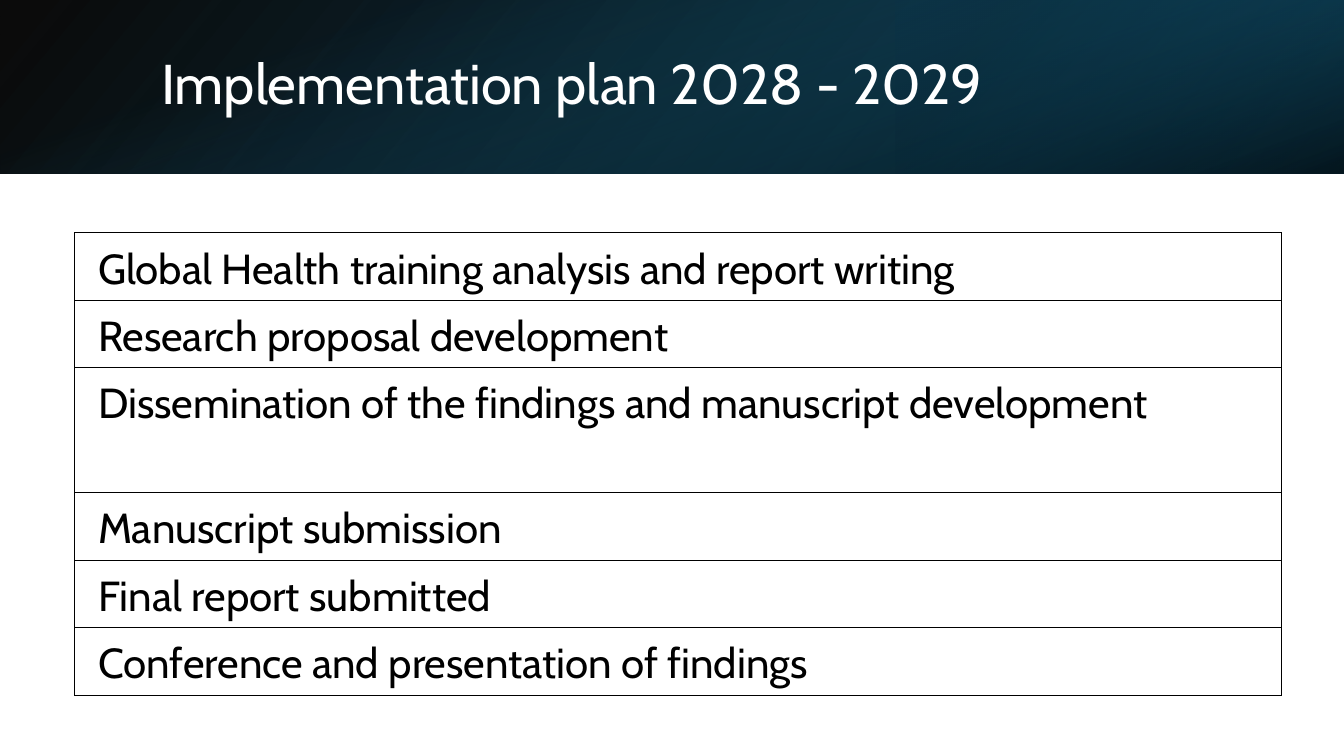
import pptx
import pptx.dml.color
import pptx.enum.shapes
import pptx.enum.text
import pptx.oxml.ns
import pptx.util
from lxml import etree

Pt = pptx.util.Pt
qn = pptx.oxml.ns.qn

SLIDE_W, SLIDE_H = 960, 540
BANNER_H = 124
ROW_H, TALL_ROW_H = 48.2, 89.3
PLAN = [
    ("Global Health training analysis and report writing", ROW_H),
    ("Research proposal development", ROW_H),
    ("Dissemination of the findings and manuscript development", TALL_ROW_H),
    ("Manuscript submission", ROW_H),
    ("Final report submitted", ROW_H),
    ("Conference and presentation of findings", ROW_H),
]


def rgb(value):
    return pptx.dml.color.RGBColor.from_string(value)


def write(tf, text, size=30, color="000000", font="Cabin", spacing=1.0, after=0):
    p = tf.paragraphs[0]
    p.line_spacing = spacing
    p.space_after = Pt(after)
    r = p.add_run()
    r.text = text
    r.font.name = font
    r.font.size = Pt(size)
    r.font.color.rgb = rgb(color)


class Deck:
    def __init__(self, border="000000", border_width=1):
        self.border = border
        self.border_width = border_width
        self.prs = pptx.Presentation()
        self.prs.slide_width, self.prs.slide_height = Pt(SLIDE_W), Pt(SLIDE_H)
        self.slide = self.prs.slides.add_slide(self.prs.slide_layouts[6])

    def gradient(self, x, y, w, h, stops, angle, rotation=0, flip=False):
        """Add a rectangle; stops are (position %, colour, opacity %), angle is clockwise."""
        sp = self.slide.shapes.add_shape(
            pptx.enum.shapes.MSO_SHAPE.RECTANGLE, Pt(x), Pt(y), Pt(w), Pt(h))
        sp.shadow.inherit = False
        sp.line.fill.background()
        sp.rotation = rotation
        if flip:
            sp._element.spPr.find(qn("a:xfrm")).set("flipH", "1")
        sp.fill.gradient()
        sp.fill.gradient_angle = 360 - angle
        for stop, (position, color, _) in zip(sp.fill.gradient_stops, stops):
            stop.position = position / 100
            stop.color.rgb = rgb(color)
        colors = sp._element.spPr.iter(qn("a:srgbClr"))
        for clr, (_, _, opacity) in zip(list(colors), stops):
            etree.SubElement(clr, qn("a:alpha")).set("val", str(opacity * 1000))

    def title(self, text, x, y, w, h):
        tf = self.slide.shapes.add_textbox(Pt(x), Pt(y), Pt(w), Pt(h)).text_frame
        tf.word_wrap = True
        tf.vertical_anchor = pptx.enum.text.MSO_ANCHOR.MIDDLE
        write(tf, text, size=40, color="FFFFFF", spacing=0.9)

    def table(self, rows, x, y, w):
        total = sum(height for _, height in rows)
        table = self.slide.shapes.add_table(
            len(rows), 1, Pt(x), Pt(y), Pt(w), Pt(total)).table
        table.first_row = table.horz_banding = False
        for i, (text, height) in enumerate(rows):
            table.rows[i].height = Pt(height)
            cell = table.cell(i, 0)
            cell.fill.background()
            cell.margin_left = cell.margin_right = Pt(16.6)
            cell.margin_top, cell.margin_bottom = Pt(2.2), 0
            write(cell.text_frame, text, spacing=1.15, after=8)
            self.outline(cell)

    def outline(self, cell):
        tc_pr = cell._tc.get_or_add_tcPr()
        for i, side in enumerate("LRTB"):
            ln = etree.Element(qn(f"a:ln{side}"), w=str(Pt(self.border_width)))
            fill = etree.SubElement(ln, qn("a:solidFill"))
            etree.SubElement(fill, qn("a:srgbClr")).set("val", self.border)
            tc_pr.insert(i, ln)


def main():
    deck = Deck()
    deck.gradient(0, 0, SLIDE_W, BANNER_H,
                  [(0, "000000", 96), (100, "104862", 100)], 140, flip=True)
    deck.gradient(SLIDE_W * 2 / 3, 0, SLIDE_W / 3, BANNER_H,
                  [(19, "0B3041", 68), (100, "156082", 79)], 320, rotation=180, flip=True)
    offset = (SLIDE_W - BANNER_H) / 2
    deck.gradient(offset, -offset, BANNER_H, SLIDE_W,
                  [(23, "156082", 0), (99, "000000", 74)], 340, rotation=90)
    deck.title("Implementation plan 2028 - 2029", 108, 27.4, 790.6, 69)
    deck.table(PLAN, 53.5, 166.3, 862)
    deck.prs.save("out.pptx")


if __name__ == "__main__":
    main()
